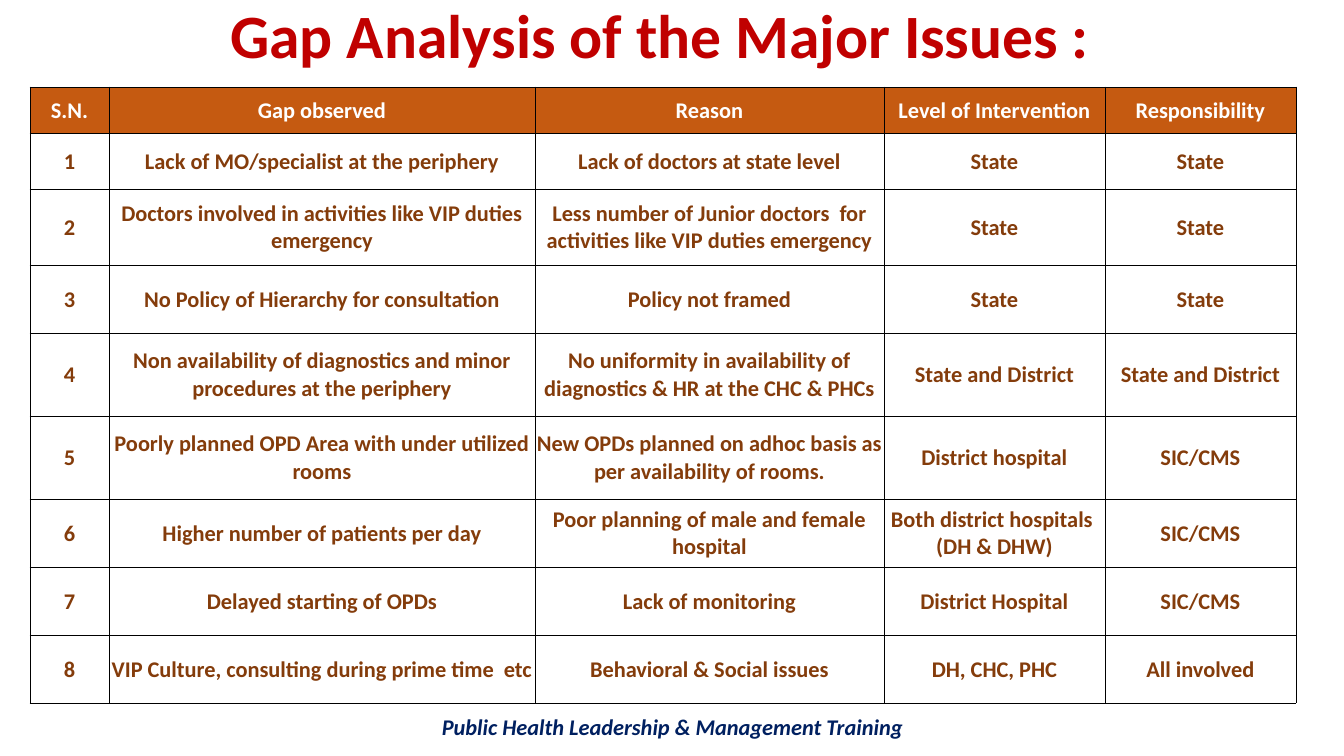
import pptx
import pptx.util
import pptx.dml.color
import pptx.enum.text
import pptx.oxml
import pptx.oxml.ns

PX = 914400 / 100.8
SIZE = (1344, 756)
FONT = "Calibri"
RED, WHITE, BROWN, NAVY = "C00000", "FFFFFF", "843C0B", "002060"
ORANGE, BLACK = "C55A11", "000000"

TITLE = "Gap Analysis of the Major Issues :"
FOOTER = "Public Health Leadership & Management Training"
HEADS = ("S.N.", "Gap observed", "Reason", "Level of Intervention", "Responsibility")
GAPS = [
    ("Lack of MO/specialist at the periphery",
     "Lack of doctors at state level", "State", "State"),
    ("Doctors involved in activities like VIP duties emergency",
     "Less number of Junior doctors  for activities like VIP duties emergency",
     "State", "State"),
    ("No Policy of Hierarchy for consultation",
     "Policy not framed", "State", "State"),
    ("Non availability of diagnostics and minor procedures at the periphery",
     "No uniformity in availability of diagnostics & HR at the CHC & PHCs",
     "State and District", "State and District"),
    ("Poorly planned OPD Area with under utilized rooms",
     "New OPDs planned on adhoc basis as per availability of rooms.",
     "District hospital", "SIC/CMS"),
    ("Higher number of patients per day",
     "Poor planning of male and female hospital",
     "Both district hospitals \n(DH & DHW)", "SIC/CMS"),
    ("Delayed starting of OPDs", "Lack of monitoring",
     "District Hospital", "SIC/CMS"),
    ("VIP Culture, consulting during prime time  etc",
     "Behavioral & Social issues", "DH, CHC, PHC", "All involved"),
]
COLS = (79, 426, 349, 221, 191)
ROWS = (46, 56, 76, 68, 83, 83, 68, 68, 68)

MIDDLE = pptx.enum.text.MSO_ANCHOR.MIDDLE
TOP = pptx.enum.text.MSO_ANCHOR.TOP


def emu(px):
    return pptx.util.Emu(round(px * PX))


def color(code):
    return pptx.dml.color.RGBColor.from_string(code)


def write(frame, text, size=16, ink=BROWN, italic=False, space=None):
    """Fill a text frame with bold centred text, one paragraph a line."""
    frame.word_wrap = True
    frame.text = text
    for para in frame.paragraphs:
        para.alignment = pptx.enum.text.PP_ALIGN.CENTER
        para.line_spacing = space
        for run in para.runs:
            font = run.font
            font.name, font.size = FONT, pptx.util.Pt(size)
            font.bold, font.italic = True, italic
            font.color.rgb = color(ink)


def label(slide, box, text, anchor=TOP, **form):
    frame = slide.shapes.add_textbox(*map(emu, box)).text_frame
    frame.vertical_anchor = anchor
    write(frame, text, **form)


def border(cell):
    """Draw a thin black line on all four sides of a cell."""
    props = cell._tc.get_or_add_tcPr()
    for spot, side in enumerate(("lnL", "lnR", "lnT", "lnB")):
        props.insert(spot, pptx.oxml.parse_xml(
            f'<a:{side} {pptx.oxml.ns.nsdecls("a")} w="6350"><a:solidFill>'
            f'<a:srgbClr val="{BLACK}"/></a:solidFill></a:{side}>'))


def grid(slide, left, top, rows):
    frame = slide.shapes.add_table(
        len(ROWS), len(COLS), *map(emu, (left, top, sum(COLS), sum(ROWS))))
    table = frame.table
    for col, width in zip(table.columns, COLS):
        col.width = emu(width)
    for row, height, texts in zip(table.rows, ROWS, rows):
        row.height = emu(height)
        head = texts is HEADS
        for cell, text in zip(row.cells, texts):
            cell.margin_left = cell.margin_right = cell.margin_top = emu(1)
            cell.margin_bottom = 0
            cell.vertical_anchor = MIDDLE
            if head:
                cell.fill.solid()
                cell.fill.fore_color.rgb = color(ORANGE)
            else:
                cell.fill.background()
            border(cell)
            write(cell.text_frame, text, ink=WHITE if head else BROWN)


def main():
    deck = pptx.Presentation()
    deck.slide_width, deck.slide_height = map(emu, SIZE)
    slide = deck.slides.add_slide(deck.slide_layouts[6])
    label(slide, (30, 10, 1261, 58), TITLE, anchor=MIDDLE,
          size=44, ink=RED, space=0.9)
    rows = [HEADS] + [(str(num), *gap) for num, gap in enumerate(GAPS, 1)]
    grid(slide, 30, 87, rows)
    label(slide, (93, 708, 1159, 37), FOOTER, ink=NAVY, italic=True)
    deck.save("out.pptx")


if __name__ == "__main__":
    main()
